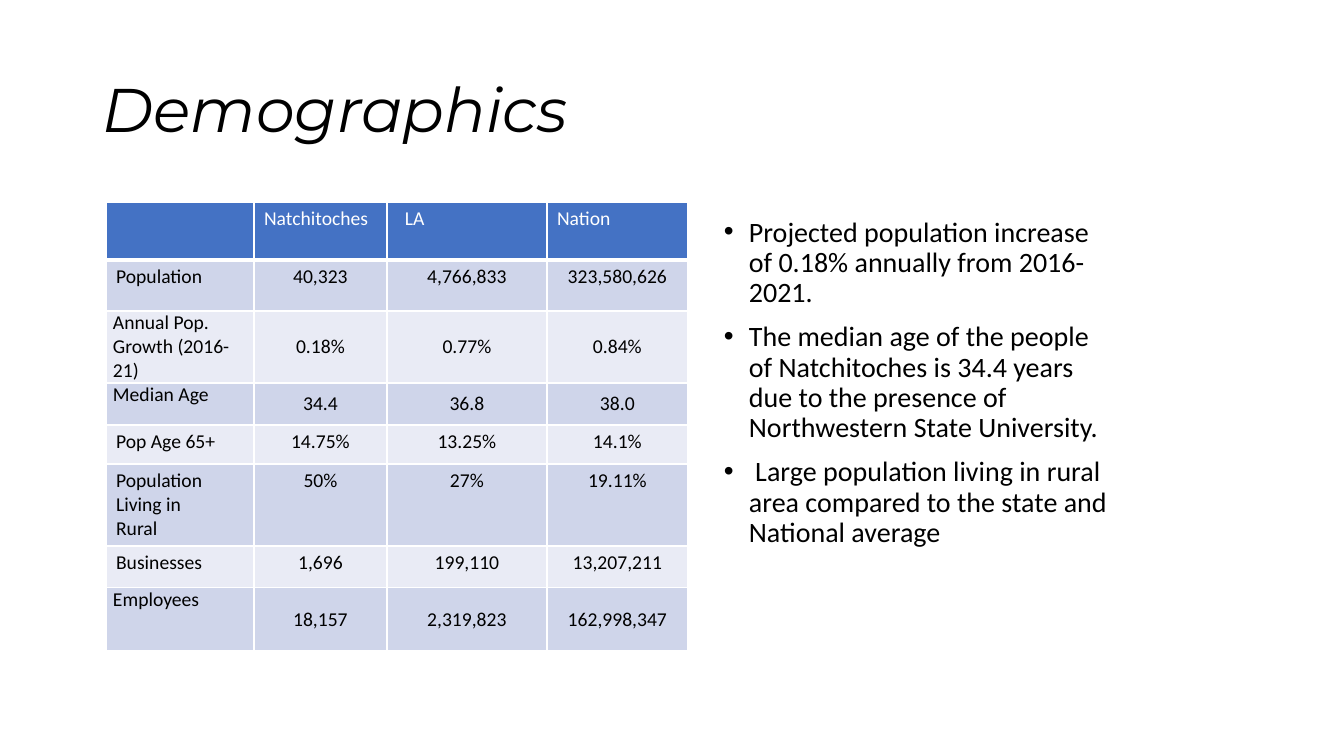
from lxml import etree
from pptx import Presentation
from pptx import util as u
from pptx.dml.color import RGBColor
from pptx.enum import text
from pptx.oxml import ns

EMU_PER_PX = 914400 / 100.8
BLACK = RGBColor(0x00, 0x00, 0x00)
WHITE = RGBColor(0xFF, 0xFF, 0xFF)
HEADER_BLUE = RGBColor(0x44, 0x72, 0xC4)
BAND_DARK = RGBColor(0xCF, 0xD5, 0xEA)
BAND_LIGHT = RGBColor(0xE9, 0xEB, 0xF5)

COLUMN_WIDTHS = [148, 133, 160, 141]
ROW_HEIGHTS = [58, 51, 72, 42, 39, 82, 42, 63]
ROWS = [
    ["", "Natchitoches", "LA", "Nation"],
    ["Population", "40,323", "4,766,833", "323,580,626"],
    ["Annual Pop. Growth (2016-21)", "0.18%", "0.77%", "0.84%"],
    ["Median Age", "34.4", "36.8", "38.0"],
    ["Pop Age 65+", "14.75%", "13.25%", "14.1%"],
    ["Population Living in\nRural", "50%", "27%", "19.11%"],
    ["Businesses", "1,696", "199,110", "13,207,211"],
    ["Employees", "18,157", "2,319,823", "162,998,347"],
]
TIGHT_ROWS = {2, 3, 7}
FINDINGS = [
    "Projected population increase of 0.18% annually from 2016-2021.",
    "The median age of the people of Natchitoches is 34.4 years due to the "
    "presence of Northwestern State University.",
    "\N{NO-BREAK SPACE}Large population living in rural area compared to the state "
    "and National average",
]


def px(n):
    return u.Emu(round(n * EMU_PER_PX))


def set_hanging(p, indent):
    """Set a hanging indent with a bullet."""
    pPr = p._p.get_or_add_pPr()
    pPr.set("marL", str(px(indent)))
    pPr.set("indent", str(-px(indent)))
    etree.SubElement(pPr, ns.qn("a:buFont")).set("typeface", "Arial")
    etree.SubElement(pPr, ns.qn("a:buChar")).set("char", "•")


def write(tf, paragraphs, size, font="Calibri", color=BLACK, italic=False,
          align=text.PP_ALIGN.LEFT, spacing=None, before=0, bullet_indent=0):
    tf.word_wrap = True
    for i, words in enumerate(paragraphs):
        p = tf.add_paragraph() if i else tf.paragraphs[0]
        if bullet_indent:
            set_hanging(p, bullet_indent)
        p.alignment = align
        p.line_spacing = spacing
        if i and before:
            p.space_before = u.Pt(before)
        r = p.add_run()
        r.text = words
        r.font.name = font
        r.font.size = u.Pt(size)
        r.font.italic = italic
        r.font.color.rgb = color


def add_text(s, x, y, w, h, paragraphs, anchor=text.MSO_ANCHOR.TOP, **fmt):
    tf = s.shapes.add_textbox(px(x), px(y), px(w), px(h)).text_frame
    tf.vertical_anchor = anchor
    write(tf, paragraphs, **fmt)


def set_borders(cell, bottom=1):
    """Draw white cell borders; widths are in points."""
    tcPr = cell._tc.get_or_add_tcPr()
    for i, side in enumerate("LRTB"):
        width = bottom if side == "B" else 1
        ln = etree.Element(ns.qn(f"a:ln{side}"), w=str(u.Pt(width)))
        fill = etree.SubElement(ln, ns.qn("a:solidFill"))
        etree.SubElement(fill, ns.qn("a:srgbClr")).set("val", str(WHITE))
        tcPr.insert(i, ln)


def format_cell(cell, row, col):
    words = ROWS[row][col]
    header = row == 0
    cell.fill.solid()
    if header:
        cell.fill.fore_color.rgb = HEADER_BLUE
    else:
        cell.fill.fore_color.rgb = BAND_DARK if row % 2 else BAND_LIGHT
    set_borders(cell, bottom=3 if header else 1)
    if row in TIGHT_ROWS:
        cell.margin_left = cell.margin_right = px(7)
        cell.margin_top = cell.margin_bottom = 0
        if col:
            cell.vertical_anchor = text.MSO_ANCHOR.MIDDLE
    if words == "LA":
        cell.margin_left = px(18)
    if words:
        centred = col > 0 and not header
        write(cell.text_frame, words.split("\n"), size=14,
              color=WHITE if header else BLACK,
              align=text.PP_ALIGN.CENTER if centred else text.PP_ALIGN.LEFT)


def add_demographics_table(s, x, y):
    frame = s.shapes.add_table(len(ROWS), len(COLUMN_WIDTHS), px(x), px(y),
                               px(sum(COLUMN_WIDTHS)), px(sum(ROW_HEIGHTS)))
    table = frame.table
    for column, width in zip(table.columns, COLUMN_WIDTHS):
        column.width = px(width)
    for row, height in enumerate(ROW_HEIGHTS):
        table.rows[row].height = px(height)
        for col in range(len(COLUMN_WIDTHS)):
            format_cell(table.cell(row, col), row, col)


def main():
    prs = Presentation()
    prs.slide_width, prs.slide_height = px(1344), px(756)
    s = prs.slides.add_slide(prs.slide_layouts[6])
    add_text(s, 93, 40, 1159, 146, ["Demographics"], size=44, font="Montserrat",
             italic=True, spacing=0.9, anchor=text.MSO_ANCHOR.MIDDLE)
    add_demographics_table(s, 106, 202)
    add_text(s, 714, 213, 403, 462, FINDINGS, size=20, spacing=0.9, before=10,
             bullet_indent=25)
    prs.save("out.pptx")


if __name__ == "__main__":
    main()
